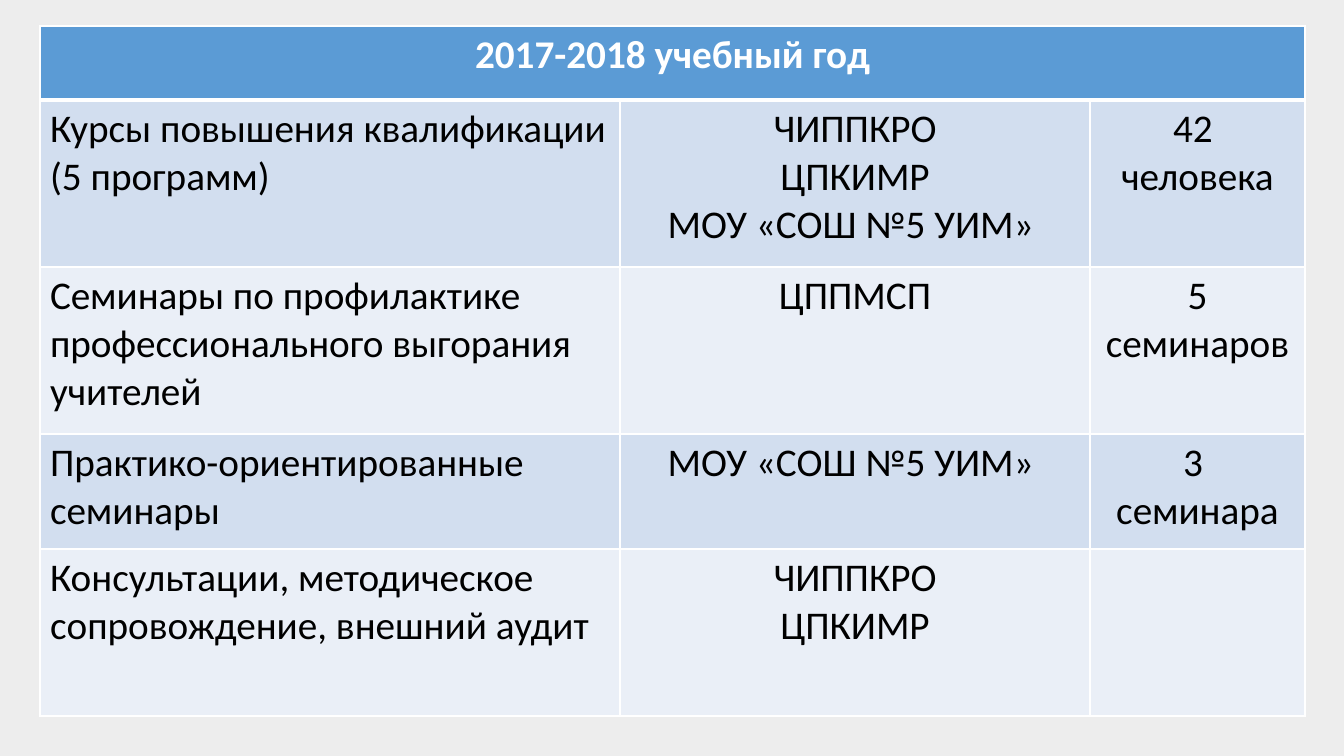
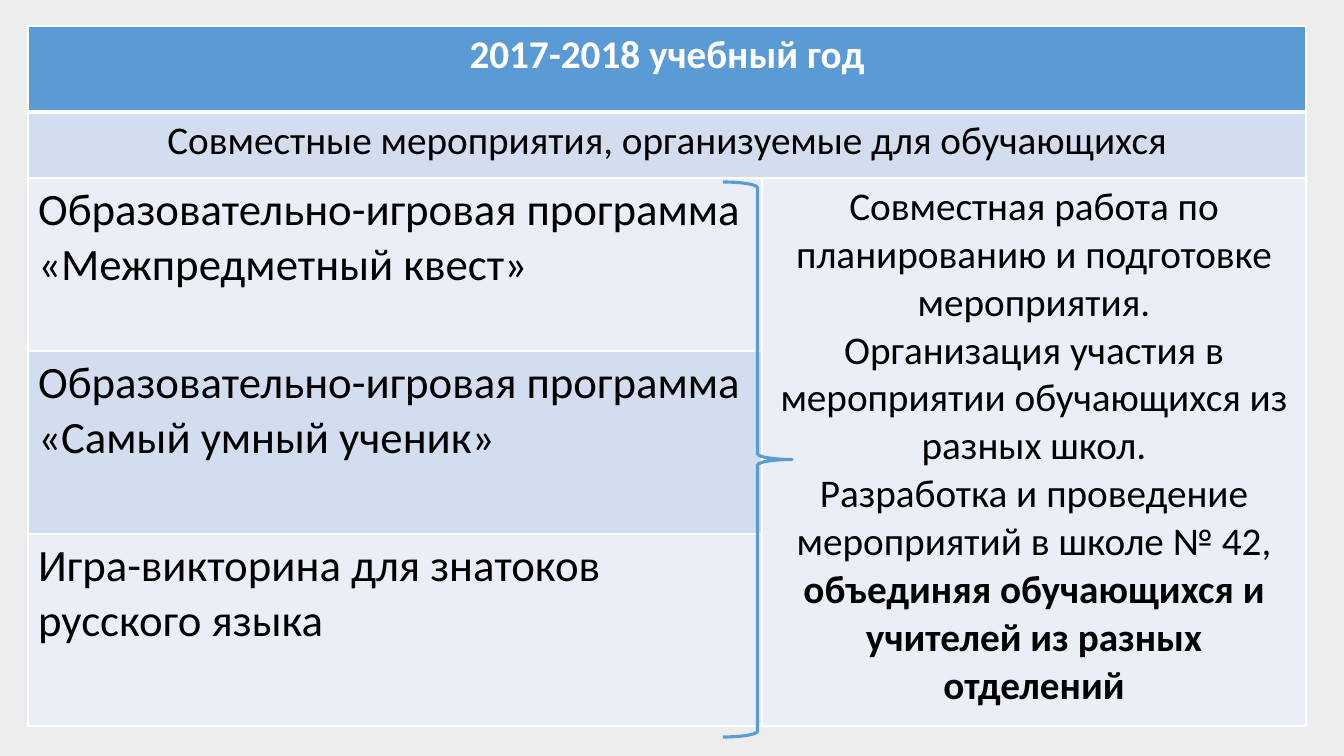
from lxml import etree
from pptx import Presentation
from pptx.dml.color import RGBColor
from pptx.enum.shapes import MSO_SHAPE
from pptx.enum.text import PP_ALIGN
from pptx.oxml.ns import qn
from pptx.util import Emu, Pt

# Page and scale
SLIDE_WIDTH, SLIDE_HEIGHT = 1344, 756
EMU_PER_PX = 12192000 / SLIDE_WIDTH

# Shared look
FONT = "Calibri"
TEXT_SIZE, LARGE_SIZE = 28, 32
THIN, THICK = 1, 3
BLUE = RGBColor(0x5B, 0x9B, 0xD5)
BAND_DARK = RGBColor(0xD2, 0xDE, 0xEF)
BAND_LIGHT = RGBColor(0xEA, 0xEF, 0xF7)
BACKGROUND = RGBColor(0xED, 0xED, 0xED)
WHITE = RGBColor(0xFF, 0xFF, 0xFF)
BLACK = RGBColor(0x00, 0x00, 0x00)
LEFT, CENTER = PP_ALIGN.LEFT, PP_ALIGN.CENTER
RIGHT_BRACE = MSO_SHAPE.RIGHT_BRACE

TABLE_TOP = 26
YEAR_TITLE = "2017-2018 учебный год"

# Table contents: a cell is a list of paragraphs
TRAINING_ROWS = [
    [["Курсы повышения квалификации", "(5 программ)"],
     ["ЧИППКРО", "ЦПКИМР", "МОУ «СОШ №5 УИМ» "],
     ["42 ", "человека"]],
    [["Семинары по профилактике профессионального выгорания учителей"],
     ["ЦППМСП"],
     ["5 семинаров"]],
    [["Практико-ориентированные семинары"],
     ["МОУ «СОШ №5 УИМ» "],
     ["3 ", "семинара"]],
    [["Консультации, методическое сопровождение, внешний аудит"],
     ["ЧИППКРО", "ЦПКИМР"],
     []],
]
EVENTS_TITLE = "Совместные мероприятия, организуемые для обучающихся"
EVENTS = [
    "Образовательно-игровая программа «Межпредметный квест»",
    "Образовательно-игровая программа «Самый умный ученик»",
    "Игра-викторина для знатоков русского языка",
]
JOINT_WORK = [
    "Совместная работа по планированию и подготовке мероприятия.",
    "Организация участия в мероприятии обучающихся из разных школ.",
    [("Разработка и проведение мероприятий в школе № 42, ", False),
     ("объединяя обучающихся и учителей из разных отделений", True)],
]


def px(length):
    return Emu(round(length * EMU_PER_PX))


def add_border(cell, side, width):
    line = etree.SubElement(cell._tc.get_or_add_tcPr(), qn("a:" + side), w=str(Pt(width)))
    fill = etree.SubElement(line, qn("a:solidFill"))
    etree.SubElement(fill, qn("a:srgbClr"), val=str(WHITE))


def style_cell(cell, row):
    """Draw the borders and the header or band fill of one cell."""
    add_border(cell, "lnL", THIN)
    add_border(cell, "lnR", THIN)
    add_border(cell, "lnT", THICK if row == 1 else THIN)
    add_border(cell, "lnB", THICK if row == 0 else THIN)
    cell.fill.solid()
    if row == 0:
        cell.fill.fore_color.rgb = BLUE
    else:
        cell.fill.fore_color.rgb = BAND_DARK if row % 2 else BAND_LIGHT


def write_cell(cell, paragraphs, alignment=CENTER, size=TEXT_SIZE, color=BLACK, bold=False):
    """A paragraph is a string or a list of (text, bold) runs."""
    frame = cell.text_frame
    for index, content in enumerate(paragraphs):
        paragraph = frame.add_paragraph() if index else frame.paragraphs[0]
        paragraph.alignment = alignment
        runs = [(content, bold)] if isinstance(content, str) else content
        for text, run_bold in runs:
            run = paragraph.add_run()
            run.text = text
            run.font.name = FONT
            run.font.size = Pt(size)
            run.font.bold = run_bold
            run.font.color.rgb = color


def add_year_table(slide, left, widths, heights):
    """Add a banded table with the school year across its first row."""
    table = slide.shapes.add_table(
        len(heights), len(widths), px(left), px(TABLE_TOP),
        px(sum(widths)), px(sum(heights))).table
    for column, width in zip(table.columns, widths):
        column.width = px(width)
    for index, (row, height) in enumerate(zip(table.rows, heights)):
        row.height = px(height)
        for cell in row.cells:
            style_cell(cell, index)
    merge_row(table, 0)
    write_cell(table.cell(0, 0), [YEAR_TITLE], color=WHITE, bold=True)
    return table


def merge_row(table, row):
    table.cell(row, 0).merge(table.cell(row, len(table.columns) - 1))


def add_brace(slide, left, top, width, height):
    brace = slide.shapes.add_shape(RIGHT_BRACE, px(left), px(top), px(width), px(height))
    brace.shadow.inherit = False
    brace.fill.background()
    brace.line.color.rgb = BLUE
    brace.line.width = Pt(2.25)


def build_training_slide(slide):
    table = add_year_table(slide, 40, [580, 470, 215], [74, 167, 167, 115, 167])
    for row, cells in enumerate(TRAINING_ROWS, start=1):
        for column, paragraphs in enumerate(cells):
            write_cell(table.cell(row, column), paragraphs, CENTER if column else LEFT)


def build_events_slide(slide):
    table = add_year_table(slide, 28, [734, 544], [86, 66, 173, 183, 192])
    merge_row(table, 1)
    write_cell(table.cell(1, 0), [EVENTS_TITLE])
    for row, event in enumerate(EVENTS, start=2):
        write_cell(table.cell(row, 0), [event], LEFT, LARGE_SIZE)
    # Joint work spans all the events
    table.cell(2, 1).merge(table.cell(4, 1))
    write_cell(table.cell(2, 1), JOINT_WORK)
    add_brace(slide, 723, 182, 69, 555)


def main():
    presentation = Presentation()
    presentation.slide_width = px(SLIDE_WIDTH)
    presentation.slide_height = px(SLIDE_HEIGHT)
    background = presentation.slide_master.background.fill
    background.solid()
    background.fore_color.rgb = BACKGROUND
    blank = presentation.slide_layouts[6]
    for build in (build_training_slide, build_events_slide):
        build(presentation.slides.add_slide(blank))
    presentation.save("out.pptx")


if __name__ == "__main__":
    main()
